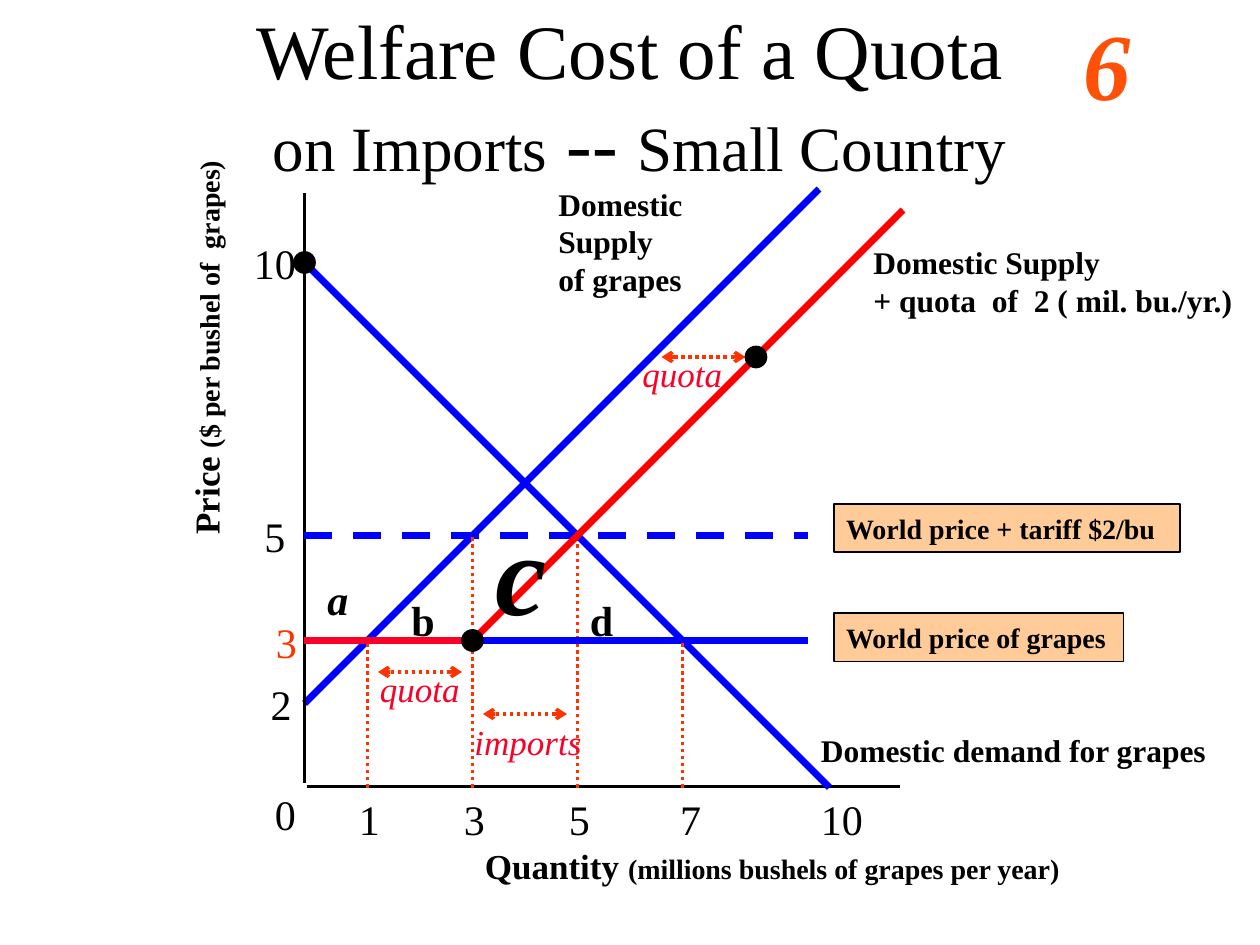
from dataclasses import dataclass

from lxml.etree import SubElement
from pptx import Presentation
from pptx.dml.color import RGBColor
from pptx.enum.dml import MSO_LINE_DASH_STYLE as Dash
from pptx.enum.shapes import MSO_CONNECTOR, MSO_SHAPE
from pptx.enum.text import MSO_ANCHOR, MSO_AUTO_SIZE, PP_ALIGN
from pptx.oxml.ns import qn
from pptx.util import Emu, Pt

PX = 7620  # 120 px to the inch
FONT = "Times New Roman"
COLORS = {
    "black": "000000", "blue": "0000FF", "red": "FF0000", "crimson": "FC0128",
    "guide": "FF3300", "number": "FF5008", "peach": "FFCC99",
}
AXIS_X, AXIS_Y = 290, 750
WORLD_PRICE_Y, TARIFF_PRICE_Y = 610, 510


@dataclass
class Label:
    """Text in a box; each line is a list of (text, size) runs."""
    left: int
    top: int
    width: int
    height: int
    lines: list[list[tuple[str, int]]]
    color: str = "black"
    bold: bool = False
    italic: bool = False
    wrap: bool = False
    rotation: int = 0


@dataclass
class Line:
    start: tuple[int, int]
    end: tuple[int, int]
    color: str
    weight: int
    dash: Dash | None = None
    arrows: bool = False


def px(value: int) -> Emu:
    return Emu(value * PX)


def rgb(name: str) -> RGBColor:
    return RGBColor.from_string(COLORS[name])


def add_run(paragraph, text: str, size: int, color="black", bold=False, italic=False) -> None:
    run = paragraph.add_run()
    run.text = text
    font = run.font
    font.name, font.size, font.bold, font.italic = FONT, Pt(size), bold, italic
    font.color.rgb = rgb(color)


def fill_text(shape, label: Label) -> None:
    frame = shape.text_frame
    frame.word_wrap = label.wrap
    frame.auto_size = MSO_AUTO_SIZE.SHAPE_TO_FIT_TEXT
    for index, runs in enumerate(label.lines):
        paragraph = frame.add_paragraph() if index else frame.paragraphs[0]
        paragraph.alignment = PP_ALIGN.LEFT
        for text, size in runs:
            add_run(paragraph, text, size, label.color, label.bold, label.italic)


def add_label(slide, label: Label) -> None:
    shape = slide.shapes.add_textbox(
        px(label.left), px(label.top), px(label.width), px(label.height))
    shape.rotation = label.rotation
    fill_text(shape, label)


def add_filled_shape(slide, kind, left: int, top: int, width: int, height: int, fill: str):
    shape = slide.shapes.add_shape(kind, px(left), px(top), px(width), px(height))
    shape.shadow.inherit = False
    shape.fill.solid()
    shape.fill.fore_color.rgb = rgb(fill)
    shape.line.color.rgb = rgb("black")
    shape.line.width = Pt(1)
    return shape


def add_line(slide, line: Line) -> None:
    connector = slide.shapes.add_connector(
        MSO_CONNECTOR.STRAIGHT, *map(px, line.start + line.end))
    connector.line.color.rgb = rgb(line.color)
    connector.line.width = Pt(line.weight)
    if line.dash:
        connector.line.dash_style = line.dash
    if line.arrows:
        outline = connector.line._get_or_add_ln()
        for end in ("a:headEnd", "a:tailEnd"):
            SubElement(outline, qn(end), type="arrow")
    SubElement(connector._element.spPr, qn("a:effectLst"))


def add_title(slide) -> None:
    title = slide.shapes.title
    title.left, title.top, title.width, title.height = map(px, (90, 0, 1020, 180))
    frame = title.text_frame
    frame.auto_size = MSO_AUTO_SIZE.NONE
    frame.vertical_anchor = MSO_ANCHOR.MIDDLE
    paragraph = frame.paragraphs[0]
    paragraph.alignment = PP_ALIGN.CENTER
    add_run(paragraph, "Welfare Cost of a Quota", 44)
    paragraph.add_line_break()
    for text, size in ((" ", 44), ("on Imports", 36), (" -- ", 44), ("Small Country", 36)):
        add_run(paragraph, text, size)


def guide(x: int, top: int) -> Line:
    return Line((x, AXIS_Y), (x, top), "guide", 2, Dash.ROUND_DOT)


def span_arrow(left: int, y: int) -> Line:
    return Line((left + 80, y), (left, y), "guide", 2, Dash.ROUND_DOT, arrows=True)


LINES = [
    Line((AXIS_X, 670), (780, 180), "blue", 4),
    Line((AXIS_X, 184), (AXIS_X, 746), "black", 2),
    Line((292, 749), (857, 749), "black", 2),
    guide(550, TARIFF_PRICE_Y),
    Line((AXIS_X, 250), (790, AXIS_Y), "blue", 4),
    Line((AXIS_X, WORLD_PRICE_Y), (770, WORLD_PRICE_Y), "blue", 4),
    guide(350, WORLD_PRICE_Y),
    guide(650, WORLD_PRICE_Y),
    Line((AXIS_X, TARIFF_PRICE_Y), (770, TARIFF_PRICE_Y), "blue", 4, Dash.DASH),
    guide(450, TARIFF_PRICE_Y),
    Line((450, WORLD_PRICE_Y), (860, 200), "red", 4),
    Line((AXIS_X, WORLD_PRICE_Y), (450, WORLD_PRICE_Y), "crimson", 4),
    span_arrow(630, 340),
    span_arrow(360, 640),
    span_arrow(460, 680),
]

# text, left, top, width, colour
TICKS = [
    ("10", 230, 220, 64, "black"), ("5", 240, 480, 44, "black"),
    ("3", 251, 581, 44, "guide"), ("2", 246, 640, 44, "black"),
    ("0", 250, 745, 44, "black"), ("1", 330, 750, 44, "black"),
    ("3", 430, 750, 44, "black"), ("5", 530, 750, 44, "black"),
    ("7", 636, 750, 44, "black"), ("10", 770, 750, 64, "black"),
]

# text, left, top, width
SPANS = [("quota", 600, 330, 110), ("quota", 350, 630, 110), ("imports", 440, 680, 140)]

# text, left, top, width, height, size, italic
AREAS = [
    ("a", 300, 540, 44, 60, 24, True), ("b", 380, 560, 46, 60, 24, False),
    ("c", 460, 470, 70, 144, 66, True), ("d", 550, 560, 46, 60, 24, False),
]

CAPTIONS = [
    Label(1020, 0, 170, 120, [[("6", 54)]], "number", bold=True, italic=True, wrap=True),
    Label(770, 690, 391, 48, [[("Domestic demand for grapes", 18)]], bold=True),
    Label(520, 170, 230, 120, [[("Domestic Supply", 18)], [("of grapes", 18)]],
          bold=True, wrap=True),
    Label(820, 226, 368, 84,
          [[("Domestic Supply", 18)], [("+ quota  of  2 ( mil. bu./yr.)", 18)]], bold=True),
    Label(450, 798, 574, 52,
          [[("Quantity ", 20), ("(millions bushels of grapes per year)", 16)]], bold=True),
    Label(5, 304, 382, 52,
          [[("Price ", 20), ("($ per bushel of  grapes)", 16)]], bold=True, rotation=270),
]

PRICE_BOXES = [
    Label(794, 584, 276, 46, [[("World price of grapes", 16)]], bold=True),
    Label(794, 480, 330, 46, [[("World price + tariff $2/bu", 16)]], bold=True, wrap=True),
]

POINTS = [(AXIS_X, 250), (720, 340), (450, WORLD_PRICE_Y)]


def main() -> None:
    presentation = Presentation()
    presentation.slide_width, presentation.slide_height = px(1200), px(900)
    slide = presentation.slides.add_slide(presentation.slide_layouts[5])
    add_title(slide)
    for line in LINES:
        add_line(slide, line)
    for text, left, top, width, color in TICKS:
        add_label(slide, Label(left, top, width, 60, [[(text, 24)]], color))
    for text, left, top, width in SPANS:
        add_label(slide, Label(left, top, width, 52, [[(text, 20)]], "crimson",
                               italic=True, wrap=True))
    for text, left, top, width, height, size, italic in AREAS:
        add_label(slide, Label(left, top, width, height, [[(text, size)]],
                               bold=True, italic=italic))
    for caption in CAPTIONS:
        add_label(slide, caption)
    for box in PRICE_BOXES:
        shape = add_filled_shape(slide, MSO_SHAPE.RECTANGLE, box.left, box.top,
                                 box.width, box.height, "peach")
        fill_text(shape, box)
    for x, y in POINTS:
        add_filled_shape(slide, MSO_SHAPE.OVAL, x - 10, y - 10, 20, 20, "black")
    presentation.save("out.pptx")


if __name__ == "__main__":
    main()
